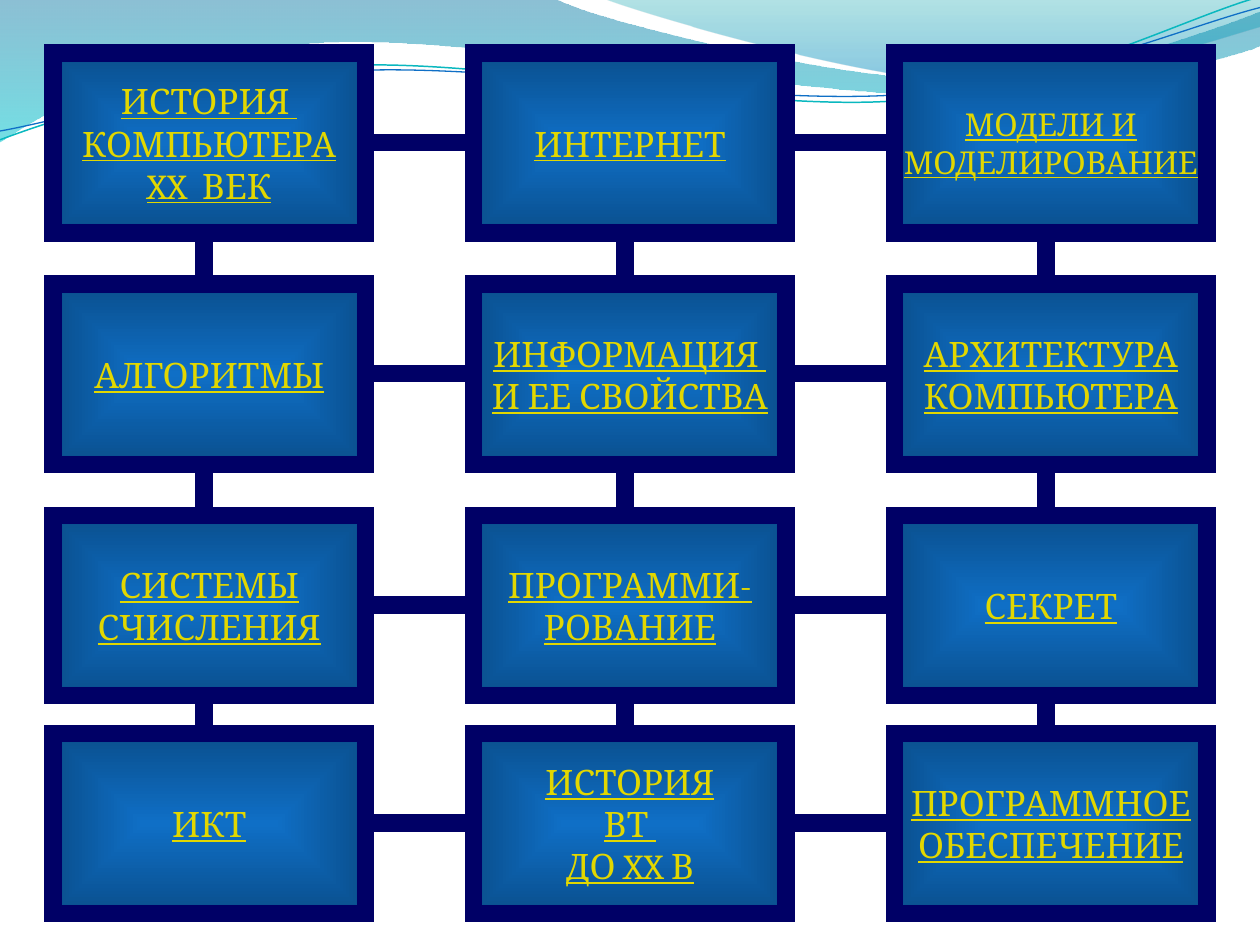
from dataclasses import dataclass

from lxml import etree
from pptx import Presentation
from pptx.dml.color import RGBColor
from pptx.enum.shapes import MSO_CONNECTOR, MSO_SHAPE
from pptx.enum.text import MSO_ANCHOR, PP_ALIGN
from pptx.oxml import parse_xml
from pptx.oxml.ns import qn
from pptx.util import Inches, Pt

RECT = MSO_SHAPE.RECTANGLE
STRAIGHT = MSO_CONNECTOR.STRAIGHT
MIDDLE = MSO_ANCHOR.MIDDLE
CENTER = PP_ALIGN.CENTER
NS = "http://schemas.openxmlformats.org/drawingml/2006/main"


@dataclass(frozen=True)
class Theme:
    font: str = "Cambria"
    size: int = 20
    small: int = 18
    text: str = "E2D700"
    frame: str = "000066"
    thick: int = 10
    # Gradient stops: position, colour, effect on the colour, percent
    card: tuple = ((0, "0F6FC6", "alpha", 100), (100, "0F6FC6", "shade", 46.28))
    back: tuple = ((0, "0074A1", "alpha", 45), (100, "00C6CF", "alpha", 55))
    front: tuple = ((0, "00A1A9", "alpha", 30), (80, "008BBF", "alpha", 45))
    teal: str = "0AB8BF"
    blue: str = "0F6FC6"


@dataclass(frozen=True)
class Grid:
    left: float = 0.42
    top: float = 0.42
    wide: float = 2.48
    high: float = 1.43
    step: float = 3.34
    drop: float = 1.8

    def x(self, col):
        return Inches(self.left + col * self.step)

    def y(self, row):
        return Inches(self.top + row * self.drop)


class Board:
    def __init__(self, slide, theme, grid):
        self.slide, self.theme, self.grid = slide, theme, grid

    def shade(self, shape, stops, way):
        shape.fill.background()
        marks = "".join(
            f'<a:gs pos="{pos * 1000}"><a:srgbClr val="{color}">'
            f'<a:{kind} val="{round(share * 1000)}"/></a:srgbClr></a:gs>'
            for pos, color, kind, share in stops)
        grad = parse_xml(f'<a:gradFill xmlns:a="{NS}" rotWithShape="1">'
                         f'<a:gsLst>{marks}</a:gsLst>{way}</a:gradFill>')
        props = shape.element.spPr
        props.replace(props.find(qn("a:noFill")), grad)

    def stroke(self, shape, color, width):
        shape.line.color.rgb = RGBColor.from_string(color)
        shape.line.width = Pt(width)

    def outline(self, start, parts, closed):
        """Parts hold one point for a straight line, three for a curve."""
        points = [(Inches(x), Inches(y)) for part in parts for x, y in part]
        maker = self.slide.shapes.build_freeform(
            Inches(start[0]), Inches(start[1]), scale=1)
        maker.add_line_segments(points, close=closed)
        shape = maker.convert_to_shape()
        shape.shadow.inherit = False
        # Gather the three points of each curve in one segment
        lines = iter(list(shape.element.spPr.iter(qn("a:lnTo"))))
        for part in parts:
            first, *rest = [next(lines) for _ in part]
            if rest:
                first.tag = qn("a:cubicBezTo")
            for line in rest:
                first.append(line[0])
                line.getparent().remove(line)
        return shape

    def wave(self, start, parts, stops):
        shape = self.outline(start, parts, True)
        self.shade(shape, stops, '<a:lin ang="5400000" scaled="0"/>')
        shape.line.fill.background()

    def thread(self, start, parts, color, width):
        shape = self.outline(start, parts, False)
        shape.fill.background()
        self.stroke(shape, color, width)

    def bar(self, x1, y1, x2, y2):
        line = self.slide.shapes.add_connector(STRAIGHT, x1, y1, x2, y2)
        self.stroke(line, self.theme.frame, self.theme.thick)
        etree.SubElement(line.element.spPr, qn("a:effectLst"))

    def card(self, col, row, text, size):
        grid, theme = self.grid, self.theme
        shape = self.slide.shapes.add_shape(
            RECT, grid.x(col), grid.y(row), Inches(grid.wide), Inches(grid.high))
        shape.shadow.inherit = False
        self.shade(shape, theme.card,
                   '<a:path path="rect"><a:fillToRect l="50000" t="50000" '
                   'r="50000" b="50000"/></a:path>')
        self.stroke(shape, theme.frame, theme.thick)
        # Square corners
        edge = shape.element.spPr.find(qn("a:ln"))
        etree.SubElement(edge, qn("a:miter"), lim="800000")
        frame = shape.text_frame
        frame.text = text
        frame.word_wrap = False
        frame.vertical_anchor = MIDDLE
        for para in frame.paragraphs:
            para.alignment = CENTER
            for run in para.runs:
                font = run.font
                font.name, font.size = theme.font, Pt(size)
                font.underline = True
                font.color.rgb = RGBColor.from_string(theme.text)


# Row position in the grid, with the topics from left to right
ROWS = (
    (0, ("ИСТОРИЯ \nКОМПЬЮТЕРА\nXX  ВЕК", "ИНТЕРНЕТ", "МОДЕЛИ И\nМОДЕЛИРОВАНИЕ")),
    (1.02, ("АЛГОРИТМЫ", "ИНФОРМАЦИЯ \nИ ЕЕ СВОЙСТВА", "АРХИТЕКТУРА\nКОМПЬЮТЕРА")),
    (2.04, ("СИСТЕМЫ\nСЧИСЛЕНИЯ", "ПРОГРАММИ-\nРОВАНИЕ", "СЕКРЕТ")),
    (3, ("ИКТ", "ИСТОРИЯ\nВТ \nДО XX В", "ПРОГРАММНОЕ\nОБЕСПЕЧЕНИЕ")),
)
# Ends of the bars, all tucked under the cards
ACROSS = ((0.59, 9.24), (0.85, 9.41), (0.85, 9.41), (0.85, 9.15))
DOWN = ((0.62, 7.25), (0.62, 7.25), (0.52, 7.15))


def main():
    deck = Presentation()
    deck.slide_width, deck.slide_height = Inches(10), Inches(7.5)
    theme, grid = Theme(), Grid()
    board = Board(deck.slides.add_slide(deck.slide_layouts[6]), theme, grid)

    # Waves along the top
    board.wave((0, 0), (
        ((4.4, -0.01),),
        ((4.76, 0.17), (6.64, 0.63), (7.58, 0.63)),
        ((8.53, 0.63), (9.58, 0.26), (10, 0.09)),
        ((10.01, 0.36),),
        ((9.83, 0.44), (8.7, 0.76), (7.46, 0.75)),
        ((6.22, 0.75), (3.82, 0.28), (2.57, 0.34)),
        ((1.29, 0.36), (0.46, 0.83), (-0.01, 1.13))), theme.back)
    board.wave((4.79, -0.01), (
        ((5.09, 0.11), (6.82, 0.62), (7.69, 0.65)),
        ((8.56, 0.69), (9.61, 0.32), (10, 0.21)),
        ((10, 0),)), theme.front)
    board.thread((0, 1.11), (
        ((0.48, 0.93), (1.58, 0.57), (2.77, 0.52)),
        ((3.95, 0.47), (5.93, 0.89), (7.13, 0.8)),
        ((8.33, 0.71), (9.38, 0.15), (9.98, -0.02))), theme.teal, 0.85)
    board.thread((0, 1.04), (
        ((0.47, 0.96), (1.64, 0.61), (2.83, 0.56)),
        ((4.03, 0.51), (5.97, 0.84), (7.17, 0.75)),
        ((8.36, 0.67), (9.41, 0.21), (10, 0.06))), theme.blue, 0.75)

    # Bars that link the cards
    for (row, _), (start, end) in zip(ROWS, ACROSS):
        y = grid.y(row) + Inches(0.71)
        board.bar(Inches(start), y, Inches(end), y)
    for col, (start, end) in enumerate(DOWN):
        x = grid.x(col) + Inches(1.2)
        board.bar(x, Inches(start), x, Inches(end))

    # Topic cards
    for row, topics in ROWS:
        for col, text in enumerate(topics):
            size = theme.small if "МОДЕЛИ И" in text else theme.size
            board.card(col, row, text, size)

    deck.save("out.pptx")


if __name__ == "__main__":
    main()
